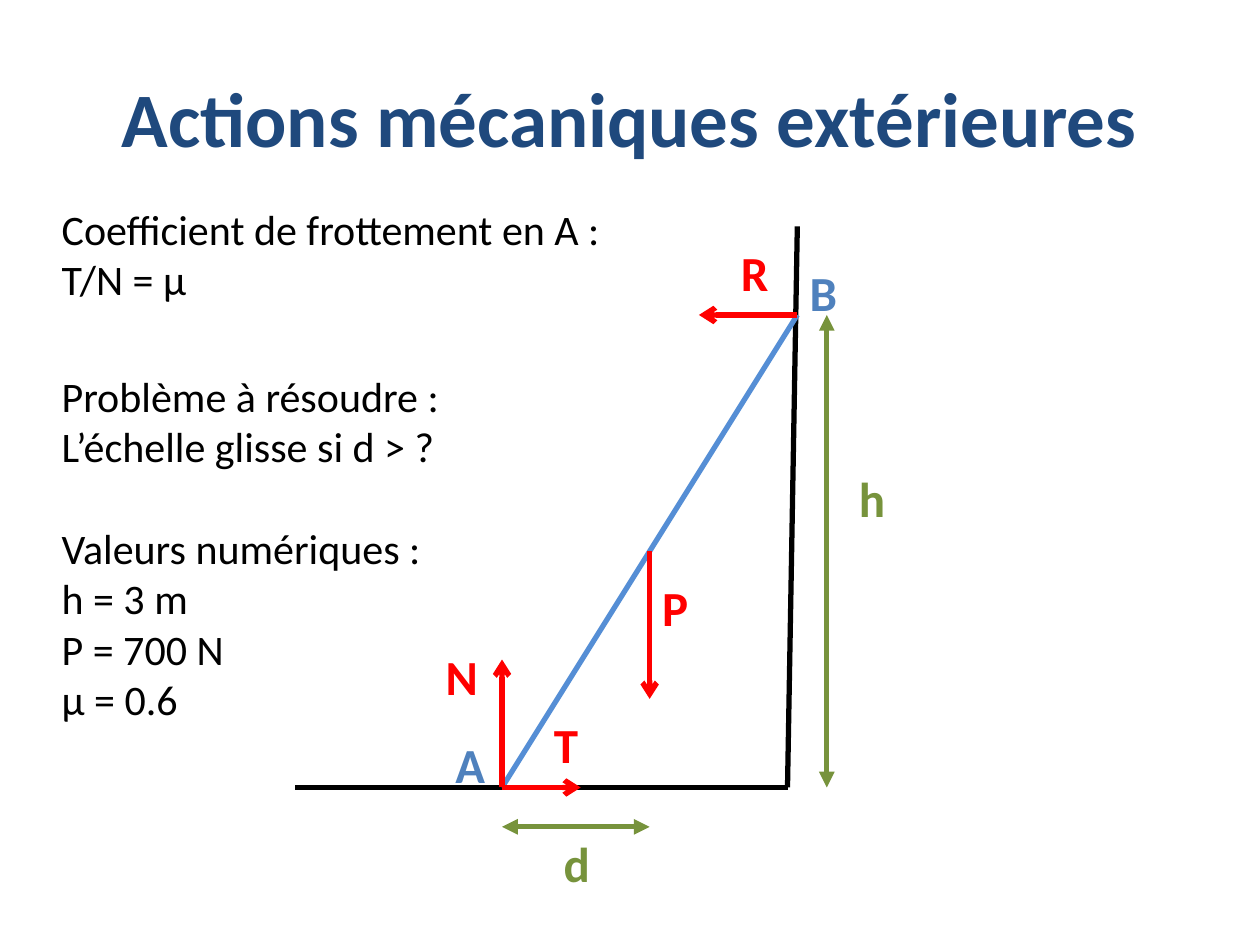
from lxml.etree import SubElement
from pptx import Presentation
from pptx.dml.color import RGBColor
from pptx.enum.shapes import MSO_CONNECTOR
from pptx.enum.text import MSO_ANCHOR, PP_ALIGN
from pptx.oxml.ns import qn
from pptx.util import Inches, Pt

BLACK = RGBColor(0x00, 0x00, 0x00)
NAVY = RGBColor(0x1F, 0x49, 0x7D)
LADDER = RGBColor(0x55, 0x8E, 0xD5)
BLUE = RGBColor(0x4F, 0x81, 0xBD)
RED = RGBColor(0xFF, 0x00, 0x00)
GREEN = RGBColor(0x77, 0x93, 0x3C)
FONT = "Calibri"
UNIT = Inches(10) / 128
DIAGRAM_COLS = 62


def add_run(p, text, size, color, bold=False):
    """Add one formatted run to a paragraph."""
    r = p.add_run()
    r.text = text
    r.font.name, r.font.size, r.font.bold = FONT, Pt(size), bold
    r.font.color.rgb = color


def add_title(s, box, text):
    """Place and format the title placeholder."""
    sp = s.shapes.title
    sp.left, sp.top, sp.width, sp.height = box
    tf = sp.text_frame
    tf.vertical_anchor = MSO_ANCHOR.MIDDLE
    p = tf.paragraphs[0]
    p.alignment = PP_ALIGN.CENTER
    add_run(p, text, 44, NAVY, True)


def add_text(s, box, groups):
    """Write groups of lines, with one line of space between groups."""
    tf = s.shapes.add_textbox(*box).text_frame
    tf.word_wrap = False
    p = tf.paragraphs[0]
    for g, lines in enumerate(groups):
        for i, line in enumerate(lines):
            if g or i:
                p = tf.add_paragraph()
            if g and not i:
                p.space_before = Pt(29.3)
            add_run(p, line, 24, BLACK)


def add_line(s, start, end, color, head=None, tail=None):
    """Draw a straight line with optional arrowheads."""
    c = s.shapes.add_connector(MSO_CONNECTOR.STRAIGHT, *start, *end)
    c.line.color.rgb = color
    c.line.width = Pt(3)
    ln = c.line._get_or_add_ln()
    for tag, kind in (("a:headEnd", head), ("a:tailEnd", tail)):
        if kind:
            SubElement(ln, qn(tag), type=kind)
    SubElement(c._element.spPr, qn("a:effectLst"))


def add_label(s, box, text, color):
    """Add a bold letter beside its line or point."""
    tf = s.shapes.add_textbox(*box).text_frame
    tf.word_wrap = True
    add_run(tf.paragraphs[0], text, 28, color, True)


def add_diagram(s, box):
    """Draw the ladder, its forces and its dimensions on a square grid."""
    left, top, width = box
    cell = width / DIAGRAM_COLS

    def at(col, row):
        """Return the slide position of a grid point."""
        return int(left + col * cell), int(top + row * cell)

    corner, foot, contact = (50, 57), (21, 57), (51, 9)
    middle = tuple((a + b) / 2 for a, b in zip(foot, contact))
    arrow, both = {"tail": "arrow"}, {"head": "triangle", "tail": "triangle"}
    lines = [
        ((0, 57), corner, BLACK, {}),
        (corner, (51, 0), BLACK, {}),
        (foot, contact, LADDER, {}),
        (middle, (36, 48), RED, arrow),
        ((21, 61), (36, 61), GREEN, both),
        ((54, 9), (54, 57), GREEN, both),
        (contact, (41, 9), RED, arrow),
        (foot, (29, 57), RED, arrow),
        (foot, (21, 44), RED, arrow),
    ]
    for start, end, color, ends in lines:
        add_line(s, at(*start), at(*end), color, **ends)

    labels = [
        ("P", 36, 35, RED), ("A", 15, 51, BLUE), ("B", 51, 3, BLUE),
        ("h", 56, 24, GREEN), ("d", 26, 61, GREEN), ("R", 44, 1, RED),
        ("N", 14, 42, RED), ("T", 25, 49, RED),
    ]
    for text, col, row, color in labels:
        add_label(s, (*at(col, row), int(6 * cell), int(7.3 * cell)), text, color)


def units(*values):
    """Convert slide grid units to lengths."""
    return [int(v * UNIT) for v in values]


def main():
    """Build the slide and save it."""
    prs = Presentation()
    prs.slide_width, prs.slide_height = Inches(10), Inches(7.5)
    s = prs.slides.add_slide(prs.slide_layouts[5])
    add_title(s, units(6.4, 3.84, 115.2, 16), "Actions mécaniques extérieures")
    add_diagram(s, units(30, 23, DIAGRAM_COLS))
    add_text(s, units(5, 20, 58, 11.6),
             [["Coefficient de frottement en A :", "T/N = µ"]])
    add_text(s, units(5, 37, 41.3, 37.5), [
        ["Problème à résoudre :", "L’échelle glisse si d > ?"],
        ["Valeurs numériques :", "h = 3 m", "P = 700 N", "µ = 0.6"],
    ])
    prs.save("out.pptx")


if __name__ == "__main__":
    main()
